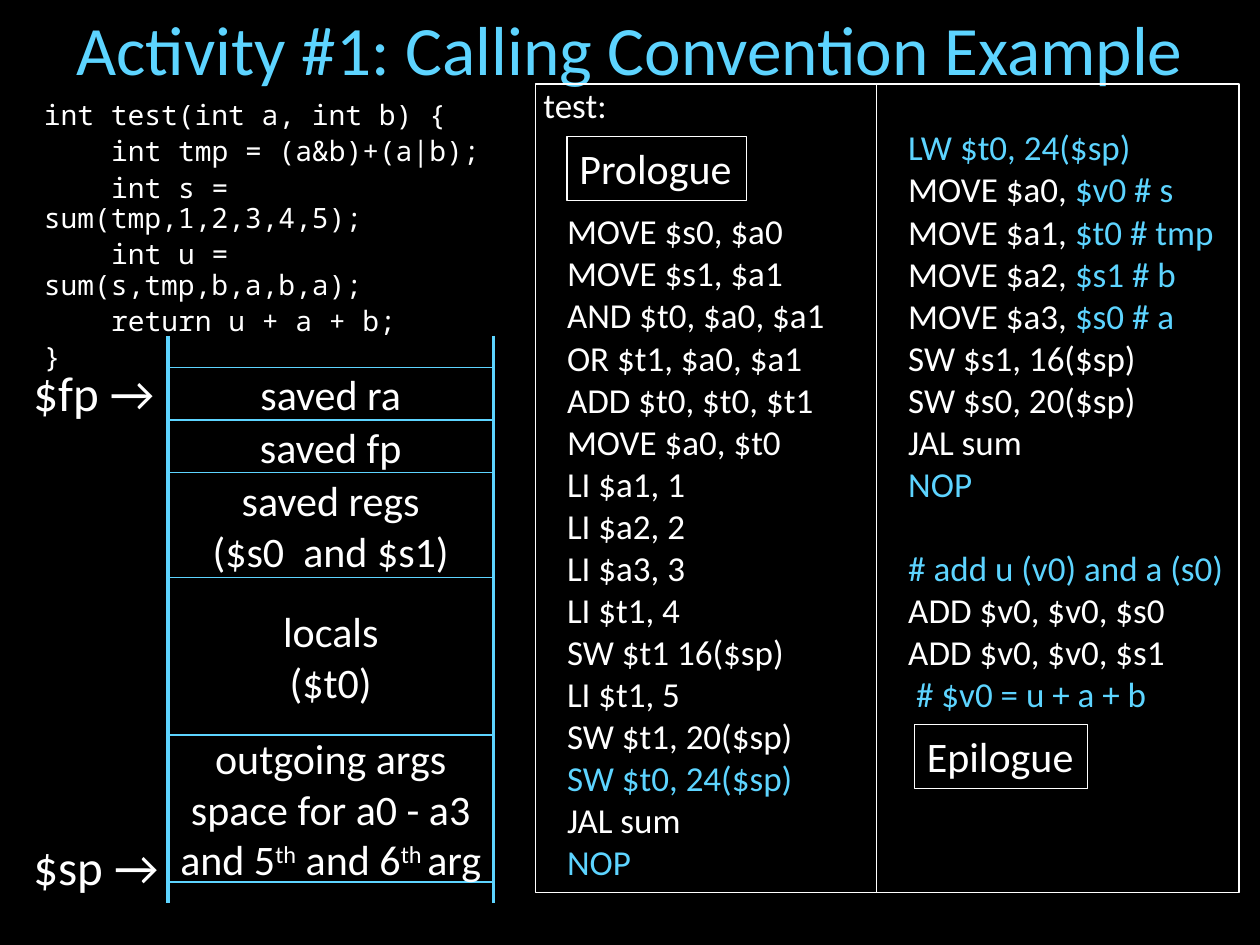
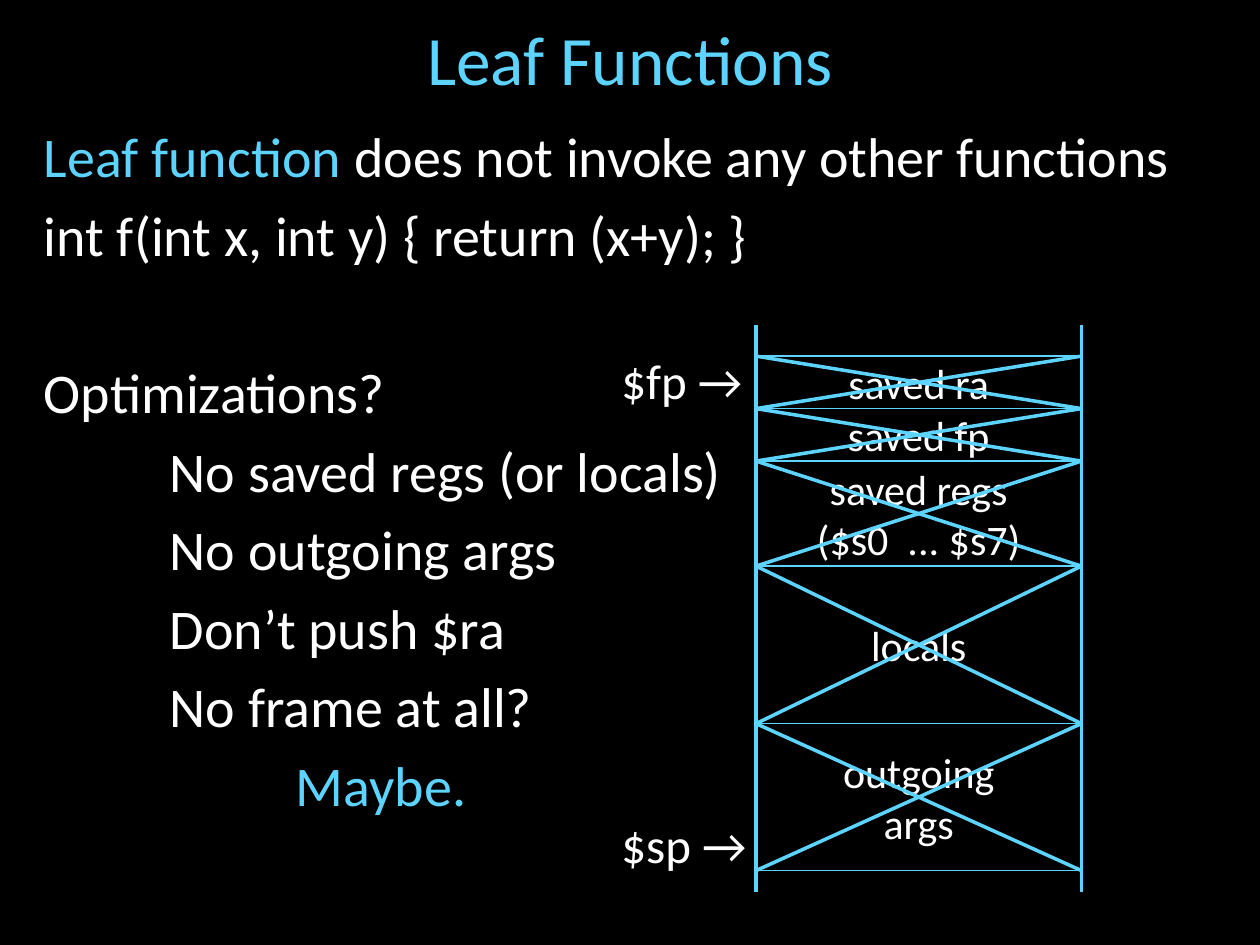
from itertools import accumulate
from lxml import etree
from pptx import Presentation
from pptx.dml.color import RGBColor
from pptx.enum import shapes, text
from pptx.oxml.ns import qn
from pptx.util import Pt

# Shared style
BLACK, WHITE, SKY = "000000", "FFFFFF", "5DD4FF"
SANS, MONO = "Calibri", "Noto Sans Mono"
LEFT, MID = text.PP_ALIGN.LEFT, text.PP_ALIGN.CENTER
TOP, HALF = text.MSO_ANCHOR.TOP, text.MSO_ANCHOR.MIDDLE
PAD = (7.2, 3.6)  # side and top insets
ROWS = [30, 30, 60, 90, 84]  # heights of the stack cells
WIDE = 186  # width of the stack

# Content: *accent*, ^superscript^; a line is (text, left margin,
# first-line indent, space before) or text alone
SOURCE = [
    "int test(int a, int b) {",
    ("int tmp = (a&b)+(a|b);", 0, 38.4, 3),
    ("int s = sum(tmp,1,2,3,4,5);", 0, 38.4, 3),
    ("int u = sum(s,tmp,b,a,b,a);", 0, 38.4, 3),
    ("return u + a + b;", 0, 38.4, 3),
    ("}", 0, 0, 3),
]
FIRST = [
    "MOVE $s0, $a0", "MOVE $s1, $a1", "AND $t0, $a0, $a1",
    "OR $t1, $a0, $a1", "ADD $t0, $t0, $t1", "MOVE $a0, $t0",
    "LI $a1, 1", "LI $a2, 2", "LI $a3, 3", "LI $t1, 4",
    "SW $t1 16($sp)", "LI $t1, 5", "SW $t1, 20($sp)",
    "*SW $t0, 24($sp)*", "JAL sum", "*NOP*",
]
SECOND = [
    "*LW $t0, 24($sp)*", "MOVE $a0, *$v0 # s*", "MOVE $a1, *$t0 # tmp*",
    "MOVE $a2, *$s1 # b*", "MOVE $a3, *$s0 # a*", "SW $s1, 16($sp)",
    "SW $s0, 20($sp)", "JAL sum", "*NOP*",
]
TOTAL = ["ADD $v0, $v0, $s0", "ADD $v0, $v0, $s1"]
FRAME = [
    ["saved ra"], ["saved fp"], ["saved regs", "($s0  and $s1)"],
    ["locals", "($t0)"],
    ["outgoing args", "space for a0 - a3", "and 5^th^ and 6^th ^arg"],
]
LEAF = [
    ["saved ra"], ["saved fp"], ["saved regs", "($s0  ... $s7)"],
    ["locals"], ["outgoing", "args"],
]
POINTS = [
    ("*Leaf function *does not invoke any other functions", 0, 0, 6.4),
    ("int f(int x, int y) { return (x+y); }", 0, 0, 6.4),
    ("Optimizations?", 0, 0, 51.8),
    ("No saved regs (or locals)", 72, 0, 6.4),
    ("No outgoing args", 72, 0, 6.4),
    ("Don’t push $ra", 72, 0, 6.4),
    ("No frame at all?", 72, 0, 6.4),
    ("*Maybe.*", 144, 0, 6.4),
]


def tint(code):
    return RGBColor.from_string(code)


def style(font, size, color=WHITE, face=SANS):
    font.size, font.name = Pt(size), face
    font.color.rgb = tint(color)


def write(shape, lines, size, face=SANS, align=LEFT, anchor=TOP,
          pad=PAD, wrap=True, pitch=None):
    """Fill a shape with marked-up lines."""
    frame = shape.text_frame
    frame.word_wrap, frame.vertical_anchor = wrap, anchor
    frame.margin_left = frame.margin_right = Pt(pad[0])
    frame.margin_top = frame.margin_bottom = Pt(pad[1])
    for n, line in enumerate(lines):
        words, margin, indent, gap = (
            (line, 0, 0, 0) if isinstance(line, str) else line)
        para = frame.add_paragraph() if n else frame.paragraphs[0]
        para.alignment, para.space_before = align, Pt(gap)
        if pitch:
            para.line_spacing = Pt(pitch)
        props = para._p.get_or_add_pPr()
        props.set("marL", str(Pt(margin)))
        props.set("indent", str(Pt(indent)))
        for i, part in enumerate(words.split("*")):
            for j, bit in enumerate(part.split("^")):
                if bit:
                    run = para.add_run()
                    run.text = bit
                    style(run.font, size, SKY if i % 2 else WHITE, face)
                    if j % 2:
                        run.font._element.set("baseline", "30000")


def label(slide, x, y, w, h, lines, size, **look):
    box = slide.shapes.add_textbox(Pt(x), Pt(y), Pt(w), Pt(h))
    write(box, lines, size, **look)
    return box


def frame(slide, x, y, w, h, lines, size, color=WHITE, width=0.75, **look):
    box = slide.shapes.add_shape(
        shapes.MSO_SHAPE.RECTANGLE, Pt(x), Pt(y), Pt(w), Pt(h))
    box.shadow.inherit = False
    box.fill.background()
    box.line.color.rgb, box.line.width = tint(color), Pt(width)
    write(box, lines, size, **look)


def rule(slide, x1, y1, x2, y2, width):
    line = slide.shapes.add_connector(
        shapes.MSO_CONNECTOR.STRAIGHT, Pt(x1), Pt(y1), Pt(x2), Pt(y2))
    line.line.color.rgb, line.line.width = tint(SKY), Pt(width)
    etree.SubElement(line._element.spPr, qn("a:effectLst"))


def stack(slide, x, y, cells, drop, tight=False, cross=False):
    """Draw a stack frame; drop is how far $sp lies below its top."""
    for side in (x, x + WIDE):
        rule(slide, side, y - 18, side, y + 306, 2.25)
    tops = list(accumulate(ROWS, initial=y))
    for n, lines in enumerate(cells):
        last = n == len(cells) - 1
        frame(slide, x, tops[n], WIDE, ROWS[n], lines, 24, SKY, 1,
              align=MID, anchor=HALF, pad=(0, 0) if tight and last else PAD)
    for name, down in (("$fp →", -6.5), ("$sp →", drop)):
        label(slide, x - 84, y + down, 88, 41, [name], 28, wrap=False)
    if cross:
        for top, end in zip(tops, tops[1:]):
            rule(slide, x, top, x + WIDE, end, 2)
            rule(slide, x, end, x + WIDE, top, 2)


def start(deck, name, y):
    """Add a slide with its title."""
    slide = deck.slides.add_slide(deck.slide_layouts[5])
    title = slide.shapes.title
    title.left, title.top = Pt(18), Pt(y)
    title.width, title.height = Pt(684), Pt(42)
    title.text_frame.auto_size = text.MSO_AUTO_SIZE.NONE
    write(title, [f"*{name}*"], 39.6, align=MID, anchor=HALF)
    return slide


def main():
    deck = Presentation()
    deck.slide_width, deck.slide_height = Pt(720), Pt(540)
    fill = deck.slide_master.background.fill
    fill.solid()
    fill.fore_color.rgb = tint(BLACK)

    # Calling convention: source, assembly columns, stack
    slide = start(deck, "Activity #1: Calling Convention Example", 6)
    label(slide, 18, 54, 288, 137, SOURCE, 16, face=MONO, pitch=17.6)
    left = [("test:", 4.5, 0, 0), (FIRST[0], 18, 0, 48)]
    left += [(line, 18, 0, 0) for line in FIRST[1:]]
    right = [(line, 18, 0, 0) for line in SECOND]
    right += [("*# add u (v0) and a (s0)*", 18, 0, 24)]
    right += [(line, 18, 0, 0) for line in TOTAL]
    right += [("*# $v0 = u + a + b*", 22.5, 0, 0)]
    frame(slide, 306, 48, 195, 462, left, 20, pad=(0, 0))
    frame(slide, 501, 48, 207, 462, right, 20, pad=(0, 24))
    stack(slide, 96, 210, FRAME, 264.5, tight=True)
    for name, x, y, w in (("Prologue", 324, 78, 102.5),
                          ("Epilogue", 522.5, 414, 99)):
        frame(slide, x, y, w, 36.5, [name], 24, wrap=False)

    # Leaf functions: points and a crossed-out stack
    slide = start(deck, "Leaf Functions", 12)
    label(slide, 18, 66, 684, 444, POINTS, 32)
    stack(slide, 432, 203.5, LEAF, 258.5, cross=True)

    deck.save("out.pptx")


if __name__ == "__main__":
    main()
